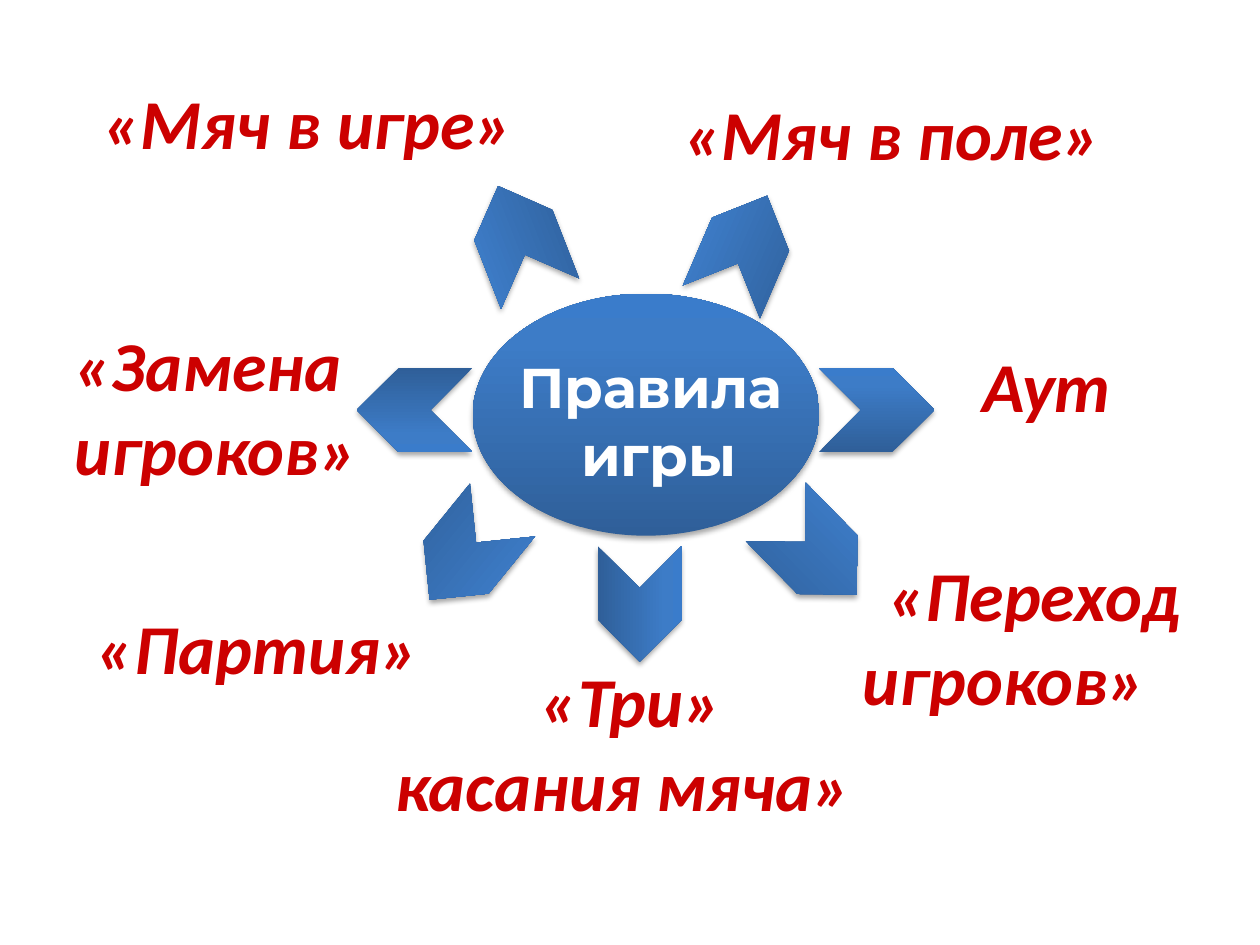
from pptx import Presentation
from pptx.dml.color import RGBColor
from pptx.enum.shapes import MSO_SHAPE as Shape
from pptx.enum.text import MSO_ANCHOR as Anchor, PP_ALIGN as Align
from pptx.oxml import parse_xml
from pptx.oxml.ns import nsdecls
from pptx.util import Cm, Pt

RED, WHITE = "CC0000", "FFFFFF"
GRADIENT = [(0, "2F5F99"), (80, "3D7CC7"), (100, "3A7CCB")]
CHEVRON_SIZE = (2.33, 1.69)
CHEVRONS = [
    (13.84, 4.17, 293.3),
    (16.51, 7.42, 0),
    (11.73, 11.33, 90),
    (8.23, 10.34, 129.1),
    (7.19, 7.42, 180),
    (9.3, 3.99, 248.7),
    (15.29, 10.31, 45.6),
]
LABELS = [
    ("«Мяч в игре» ", (1.07, 1.47, 10.59, 1.96), Align.CENTER),
    ("«Мяч в поле»", (13.54, 1.7, 10.8, 1.96), Align.LEFT),
    ("Аут", (19.56, 6.78, 3.6, 1.96), Align.LEFT),
    ("«Три»\nкасания мяча» ", (6.15, 13.13, 13.13, 3.68), Align.CENTER),
    ("«Замена\n игроков»", (0.43, 6.35, 7.52, 3.68), Align.CENTER),
    ("«Партия»", (1.7, 12.07, 7.75, 1.96), Align.LEFT),
]


def color(value):
    """Turn a hex string into a colour."""
    return RGBColor.from_string(value)


def add_solid(slide, kind, area, rotation=0):
    """Add a preset shape with the blue gradient and a soft shadow."""
    shape = slide.shapes.add_shape(kind, *map(Cm, area))
    shape.rotation = rotation
    stops = "".join(
        f'<a:gs pos="{place * 1000}"><a:srgbClr val="{value}"/></a:gs>'
        for place, value in GRADIENT
    )
    properties = shape._element.spPr
    properties.append(parse_xml(
        f'<a:gradFill {nsdecls("a")} rotWithShape="1"><a:gsLst>{stops}</a:gsLst>'
        '<a:lin ang="16200000" scaled="0"/></a:gradFill>'
    ))
    shape.line.fill.background()
    properties.append(parse_xml(
        f'<a:effectLst {nsdecls("a")}><a:outerShdw blurRad="{Pt(3.1)}" '
        f'dist="{Pt(1.8)}" dir="5400000" rotWithShape="0"><a:srgbClr val="000000">'
        '<a:alpha val="35000"/></a:srgbClr></a:outerShdw></a:effectLst>'
    ))


def add_text(slide, text, area, align=Align.CENTER, font="Calibri", size=40,
             value=RED, italic=True):
    """Add a bold text box and return it."""
    box = slide.shapes.add_textbox(*map(Cm, area))
    frame = box.text_frame
    frame.word_wrap = True
    frame.vertical_anchor = Anchor.TOP
    frame.text = text
    for para in frame.paragraphs:
        para.alignment = align
        for span in para.runs:
            span.font.name = font
            span.font.size = Pt(size)
            span.font.bold = True
            span.font.italic = italic
            span.font.color.rgb = color(value)
    return box


def main():
    """Build the slide and save it."""
    deck = Presentation()
    deck.slide_width, deck.slide_height = Cm(25.4), Cm(19.05)
    slide = deck.slides.add_slide(deck.slide_layouts[6])

    add_solid(slide, Shape.OVAL, (9.53, 5.92, 6.99, 4.88))
    add_text(slide, "Правила \nигры", (10.06, 6.99, 6.45, 3), font="Montserrat",
             size=32, value=WHITE, italic=False)
    for text, area, align in LABELS:
        add_text(slide, text, area, align)
    rotation_label = add_text(slide, " «Переход \nигроков»", (16.69, 11, 8.31, 3.68))
    last_line = rotation_label.text_frame.paragraphs[1]
    last_line._p.get_or_add_pPr().set("marR", str(Cm(1.2)))
    for left, top, rotation in CHEVRONS:
        add_solid(slide, Shape.CHEVRON, (left, top, *CHEVRON_SIZE), rotation)

    deck.save("out.pptx")


if __name__ == "__main__":
    main()
